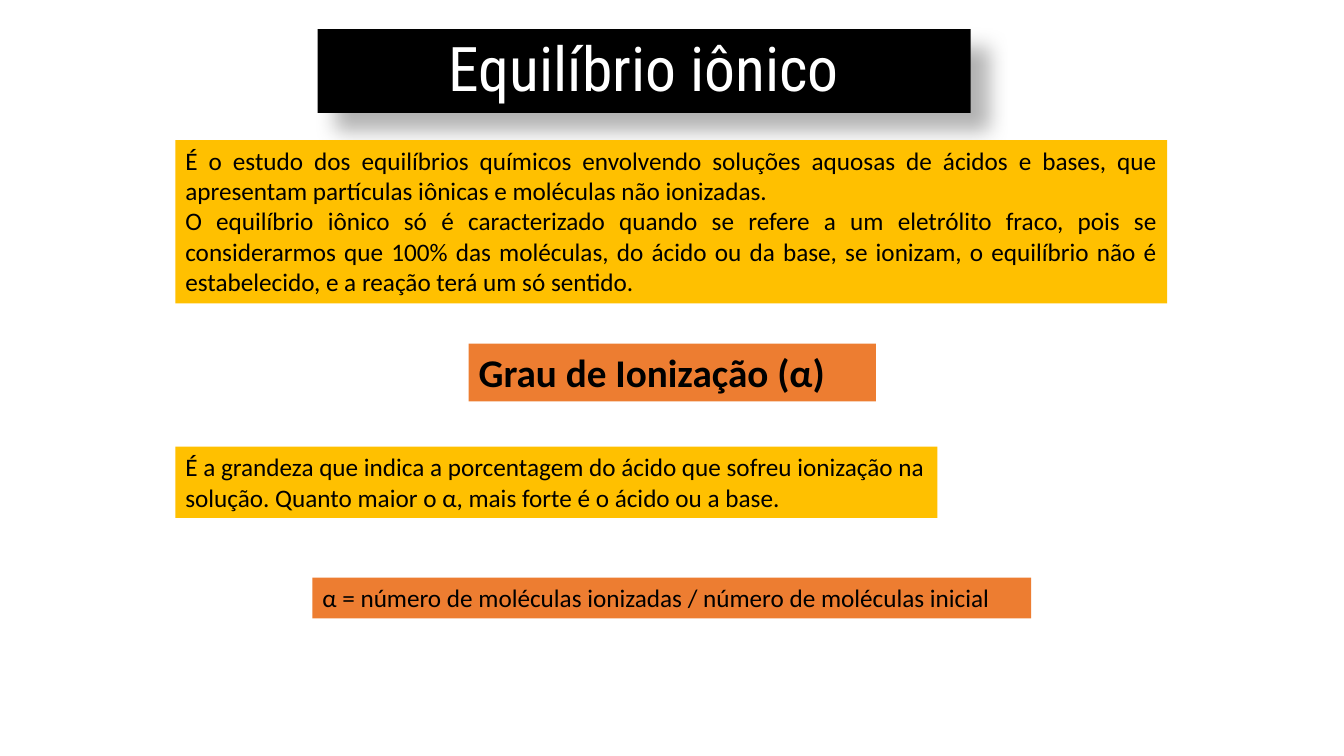
import lxml.etree
import pptx
import pptx.dml.color
import pptx.enum.text
import pptx.oxml.ns
import pptx.util

COLORS = {
    "black": "000000",
    "white": "FFFFFF",
    "amber": "FFC000",
    "orange": "ED7D31",
}
ALIGN = pptx.enum.text.PP_ALIGN
ANCHOR = pptx.enum.text.MSO_ANCHOR


def rgb(name):
    return pptx.dml.color.RGBColor.from_string(COLORS[name])


def write_text(para, text, size=18, font="Calibri", color="black", bold=False,
               align=ALIGN.LEFT, spacing=1.0):
    para.alignment = align
    para.line_spacing = spacing
    span = para.add_run()
    span.text = text
    span.font.size = pptx.util.Pt(size)
    span.font.name = font
    span.font.bold = bold
    span.font.color.rgb = rgb(color)


class SlideStyle:
    def __init__(self, page):
        self.page = page

    def text_panel(self, place, fill, texts, anchor=ANCHOR.TOP, **text_format):
        box = self.page.shapes.add_textbox(*map(pptx.util.Pt, place))
        box.fill.solid()
        box.fill.fore_color.rgb = rgb(fill)
        frame = box.text_frame
        frame.word_wrap = True
        frame.vertical_anchor = anchor
        for index, text in enumerate(texts):
            para = frame.add_paragraph() if index else frame.paragraphs[0]
            write_text(para, text, **text_format)
        return box

    def drop_shadow(self, box, blur, distance, angle, opacity):
        qn = pptx.oxml.ns.qn
        properties = box.fill._xPr
        effects = lxml.etree.SubElement(properties, qn("a:effectLst"))
        shadow = lxml.etree.SubElement(
            effects, qn("a:outerShdw"),
            blurRad=str(pptx.util.Pt(blur)), dist=str(pptx.util.Pt(distance)),
            dir=str(angle * 60000), algn="tl", rotWithShape="0")
        color = lxml.etree.SubElement(shadow, qn("a:srgbClr"), val=COLORS["black"])
        lxml.etree.SubElement(color, qn("a:alpha"), val=str(opacity * 1000))

    def title(self, place, text):
        box = self.text_panel(place, "black", [text], anchor=ANCHOR.MIDDLE,
                              size=44, font="Roboto Condensed", color="white",
                              align=ALIGN.CENTER, spacing=0.9)
        self.drop_shadow(box, blur=15, distance=18, angle=45, opacity=30)

    def explanation(self, place, *texts, align=ALIGN.LEFT):
        self.text_panel(place, "amber", texts, align=align)

    def heading(self, place, text):
        self.text_panel(place, "orange", [text], size=28, bold=True)

    def formula(self, place, text):
        self.text_panel(place, "orange", [text])


def main():
    deck = pptx.Presentation()
    deck.slide_width = pptx.util.Pt(960)
    deck.slide_height = pptx.util.Pt(540)
    style = SlideStyle(deck.slides.add_slide(deck.slide_layouts[6]))
    left = 125.3

    style.title((226.8, 20.9, 466.6, 59.8), "Equilíbrio iônico")
    style.explanation(
        (left, 100.1, 708.5, 116.6),
        "É o estudo dos equilíbrios químicos envolvendo soluções aquosas de ácidos e bases, "
        "que apresentam partículas iônicas e moléculas não ionizadas. ",
        "O equilíbrio iônico só é caracterizado quando se refere a um eletrólito fraco, "
        "pois se considerarmos que 100% das moléculas, do ácido ou da base, se ionizam, "
        "o equilíbrio não é estabelecido, e a reação terá um só sentido.",
        align=ALIGN.JUSTIFY)
    style.explanation(
        (left, 319, 544.3, 51),
        "É a grandeza que indica a porcentagem do ácido que sofreu ionização na solução. "
        "Quanto maior o α, mais forte é o ácido ou a base.")
    style.heading((334.8, 245.5, 290.9, 41.2), "Grau de Ionização (α)")
    style.formula((223.2, 412.6, 513.4, 29.1),
                  "α = número de moléculas ionizadas / número de moléculas inicial")
    deck.save("out.pptx")


if __name__ == "__main__":
    main()
